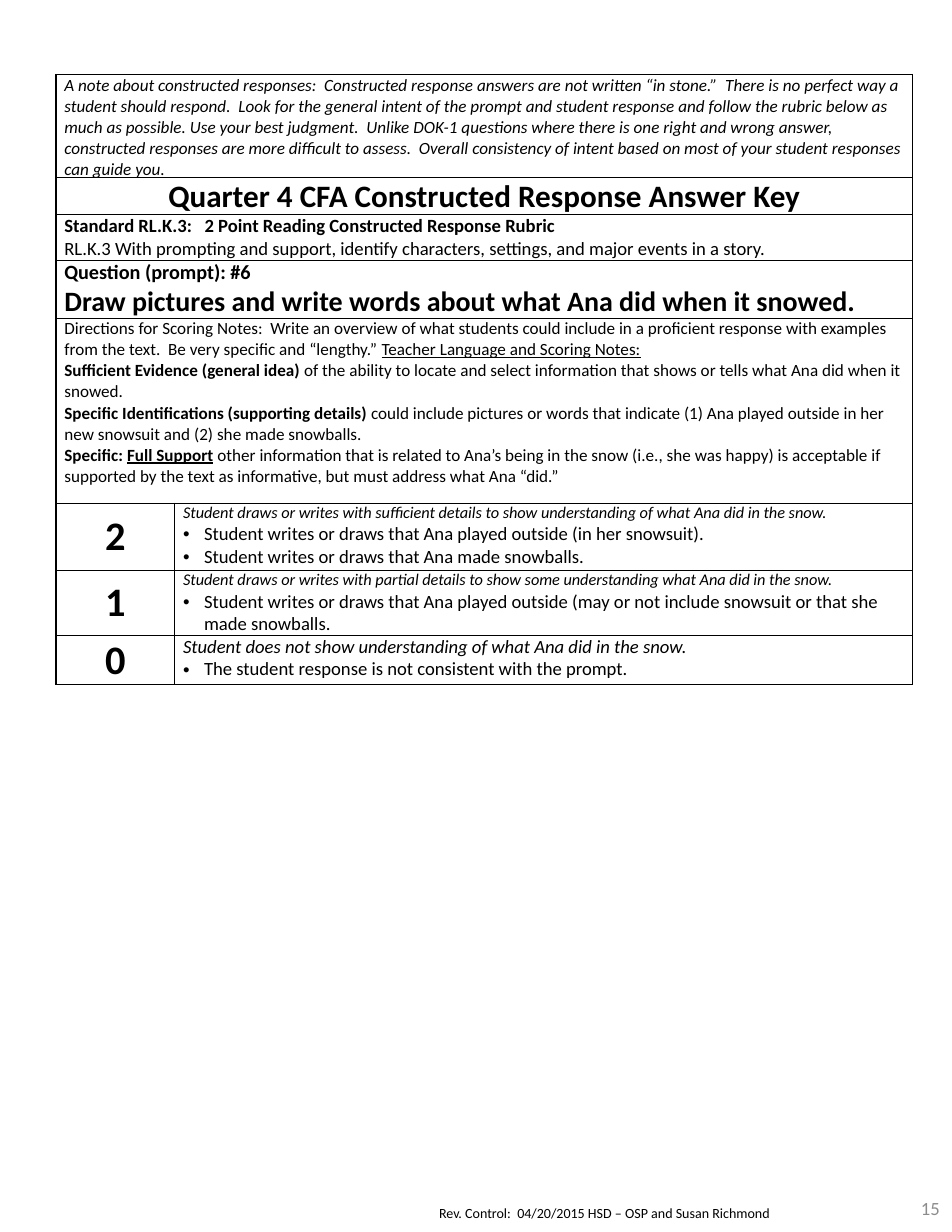
from pptx import Presentation
from pptx.dml.color import RGBColor
from pptx.enum.text import MSO_ANCHOR, PP_ALIGN
from pptx.oxml import parse_xml
from pptx.oxml.ns import nsdecls
from pptx.util import Pt

COLORS = {"ink": "000000", "page_number": "8C8C8C"}
FONT = "Calibri"
BOLD = {"bold": True}
ITALIC = {"italic": True}
UNDERLINE = {"underline": True}
BULLET_INDENT = 13.5
BORDER = 1

HEADER_ROWS = [
    (66, [(11, [("A note about constructed responses:  Constructed response answers are not written “in stone.”  There is no perfect way a student should respond.  Look for the general intent of the prompt and student response and follow the rubric below as much as possible. Use your best judgment.  Unlike DOK-1 questions where there is one right and wrong answer, constructed responses are more difficult to assess.  Overall consistency of intent based on most of your student responses can guide you.", ITALIC)])]),
    (23.8, [(20, [("Quarter 4 CFA Constructed Response Answer Key", BOLD)])]),
    (29.2, [
        (12, [("Standard RL.K.3:   2 Point Reading Constructed Response Rubric", BOLD)]),
        (12, [("RL.K.3 With prompting and support, identify characters, settings, and major events in a story.", {})]),
    ]),
    (37, [
        (13, [("Question (prompt): #6", BOLD)]),
        (18, [("Draw pictures and write words about what Ana did when it snowed.", BOLD)]),
    ]),
    (119, [
        (11, [("Directions for Scoring Notes:  Write an overview of what students could include in a proficient response with examples from the text.  Be very specific and “lengthy.” ", {}),
              ("Teacher Language and Scoring Notes:", UNDERLINE)]),
        (11, [("Sufficient Evidence (general idea) ", BOLD),
              ("of the ability to locate and select information that shows or tells what Ana did when it snowed.", {})]),
        (11, [("Specific Identifications (supporting details)", BOLD),
              (" could include pictures or words that indicate (1) Ana played outside in her new snowsuit and (2) she made snowballs.", {})]),
        (11, [("Specific: ", BOLD), ("Full Support", BOLD | UNDERLINE),
              (" other information that is related to Ana’s being in the snow (i.e., she was happy) is acceptable if supported by the text as informative, but must address what Ana “did.”", {})]),
    ]),
]
CENTERED_HEADER = 1

SCORES = [
    (43.2, "2", 10.5, "Student draws or writes with sufficient details to show understanding of what Ana did in the snow.",
     ["Student writes or draws that Ana played outside (in her snowsuit).",
      "Student writes or draws that Ana made snowballs."]),
    (41.8, "1", 10.5, "Student draws or writes with partial details to show some understanding what Ana did in the snow.",
     ["Student writes or draws that Ana played outside (may or not include snowsuit or that she made snowballs."]),
    (31.7, "0", 12, "Student does not show understanding of what Ana did in the snow.",
     ["The student response is not consistent with the prompt."]),
]
COLUMNS = [76.3, 474.5]
FOOTERS = [
    ("Rev. Control:  04/20/2015 HSD – OSP and Susan Richmond", (274.3, 771.1, 306, 18.7), 3.6,
     MSO_ANCHOR.TOP, {"size": 9}),
    ("15", (545.8, 761.8, 66.2, 30.2), 4.3, MSO_ANCHOR.MIDDLE,
     {"size": 12, "color": "page_number", "align": PP_ALIGN.RIGHT}),
]


def write(frame, runs, size=12, color="ink", align=PP_ALIGN.LEFT, bullet=False, first=True):
    paragraph = frame.paragraphs[0] if first else frame.add_paragraph()
    paragraph.alignment = align
    for text, style in runs:
        run = paragraph.add_run()
        run.text = text
        font = run.font
        font.name, font.size = FONT, Pt(size)
        font.bold = style.get("bold", False)
        font.italic = style.get("italic", False)
        font.underline = style.get("underline", False)
        font.color.rgb = RGBColor.from_string(COLORS[color])
    if bullet:
        properties = paragraph._p.get_or_add_pPr()
        properties.set("marL", str(Pt(BULLET_INDENT)))
        properties.set("indent", str(-Pt(BULLET_INDENT)))
        properties.append(parse_xml(f'<a:buFont {nsdecls("a")} typeface="Arial"/>'))
        properties.append(parse_xml(f'<a:buChar {nsdecls("a")} char="•"/>'))


def format_cell(cell):
    cell.margin_left = cell.margin_right = Pt(5.4)
    cell.margin_top = cell.margin_bottom = 0
    properties = cell._tc.get_or_add_tcPr()
    for side in ("lnL", "lnR", "lnT", "lnB"):
        properties.append(parse_xml(
            f'<a:{side} {nsdecls("a")} w="{Pt(BORDER)}"><a:solidFill>'
            f'<a:srgbClr val="{COLORS["ink"]}"/></a:solidFill></a:{side}>'))
    cell.fill.background()


def add_rubric(slide):
    heights = [row[0] for row in HEADER_ROWS + SCORES]
    rubric = slide.shapes.add_table(len(heights), len(COLUMNS), Pt(36), Pt(48),
                                    Pt(sum(COLUMNS)), Pt(sum(heights))).table
    rubric.first_row = rubric.horz_banding = False
    for column, width in zip(rubric.columns, COLUMNS):
        column.width = Pt(width)
    for row, height in zip(rubric.rows, heights):
        row.height = Pt(height)
        for cell in row.cells:
            format_cell(cell)

    for index, (_, paragraphs) in enumerate(HEADER_ROWS):
        header = rubric.cell(index, 0)
        header.merge(rubric.cell(index, 1))
        align = PP_ALIGN.CENTER if index == CENTERED_HEADER else PP_ALIGN.LEFT
        for order, (size, runs) in enumerate(paragraphs):
            write(header.text_frame, runs, size=size, align=align, first=order == 0)

    for index, (_, score, size, summary, evidence) in enumerate(SCORES, len(HEADER_ROWS)):
        score_cell, criteria = rubric.cell(index, 0), rubric.cell(index, 1)
        score_cell.vertical_anchor = MSO_ANCHOR.MIDDLE
        write(score_cell.text_frame, [(score, BOLD)], size=26, align=PP_ALIGN.CENTER)
        write(criteria.text_frame, [(summary, ITALIC)], size=size)
        for item in evidence:
            write(criteria.text_frame, [(item, {})], bullet=True, first=False)


def add_footers(slide):
    for text, bounds, inset, anchor, style in FOOTERS:
        footer = slide.shapes.add_textbox(*map(Pt, bounds)).text_frame
        footer.word_wrap = True
        footer.vertical_anchor = anchor
        footer.margin_left = footer.margin_right = Pt(7.9)
        footer.margin_top = footer.margin_bottom = Pt(inset)
        write(footer, [(text, {})], **style)


def main():
    deck = Presentation()
    deck.slide_width, deck.slide_height = Pt(612), Pt(792)
    slide = deck.slides.add_slide(deck.slide_layouts[6])
    add_footers(slide)
    add_rubric(slide)
    deck.save("out.pptx")


if __name__ == "__main__":
    main()
